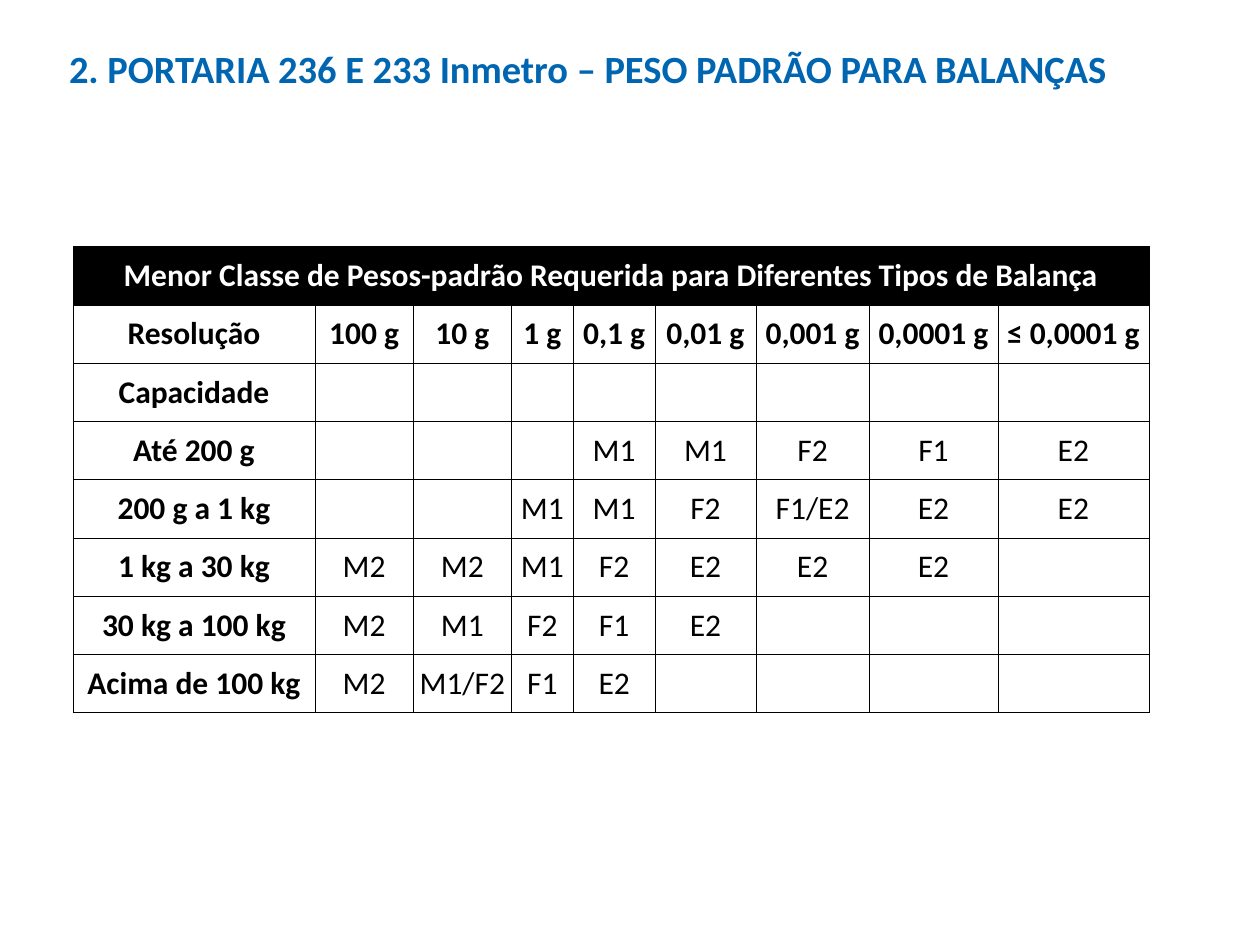
"""Build a slide with the table of minimum weight classes for balances."""
from dataclasses import dataclass

from lxml import etree
from pptx import Presentation
from pptx.dml.color import RGBColor
from pptx.enum.text import MSO_ANCHOR, PP_ALIGN
from pptx.oxml.ns import qn
from pptx.util import Inches, Pt

MIDDLE = MSO_ANCHOR.MIDDLE
LEFT, CENTER = PP_ALIGN.LEFT, PP_ALIGN.CENTER
BLACK = RGBColor(0x00, 0x00, 0x00)
WHITE = RGBColor(0xFF, 0xFF, 0xFF)
BLUE = RGBColor(0x00, 0x66, 0xB2)
FONT = "Calibri"
SLIDE_W, SLIDE_H = Inches(10), Inches(7.5)
COL_WIDTHS = (1.92, 0.78, 0.78, 0.49, 0.65, 0.8, 0.9, 1.02, 1.2)
ROW_HEIGHT = 0.4625
TITLE = "2. PORTARIA 236 E 233 Inmetro – PESO PADRÃO PARA BALANÇAS"
CAPTION = "Menor Classe de Pesos-padrão Requerida para Diferentes Tipos de Balança"
RESOLUTIONS = ("100 g", "10 g", "1 g", "0,1 g", "0,01 g", "0,001 g", "0,0001 g", "≤ 0,0001 g")


@dataclass(frozen=True)
class Capacity:
    """A capacity range and its classes, starting at a resolution column."""
    label: str
    first_col: int = 1
    classes: tuple[str, ...] = ()


CAPACITIES = (
    Capacity("Capacidade"),
    Capacity("Até 200 g", 4, ("M1", "M1", "F2", "F1", "E2")),
    Capacity("200 g a 1 kg", 3, ("M1", "M1", "F2", "F1/E2", "E2", "E2")),
    Capacity("1 kg a 30 kg", 1, ("M2", "M2", "M1", "F2", "E2", "E2", "E2")),
    Capacity("30 kg a 100 kg", 1, ("M2", "M1", "F2", "F1", "E2")),
    Capacity("Acima de 100 kg", 1, ("M2", "M1/F2", "F1", "E2")),
)


def add_text(tf, text: str, size: int, color: RGBColor, bold: bool, align) -> None:
    """Write one formatted run into the first paragraph."""
    p = tf.paragraphs[0]
    p.alignment = align
    r = p.add_run()
    r.text = text
    r.font.name, r.font.size, r.font.bold = FONT, Pt(size), bold
    r.font.color.rgb = color


def style_cell(cell, fill: RGBColor) -> None:
    """Set the borders, fill, margins and anchor of a cell."""
    tc_pr = cell._tc.get_or_add_tcPr()
    for side in ("a:lnL", "a:lnR", "a:lnT", "a:lnB"):
        ln = etree.SubElement(tc_pr, qn(side), w=str(Pt(0.25)))
        solid = etree.SubElement(ln, qn("a:solidFill"))
        etree.SubElement(solid, qn("a:srgbClr"), val=str(BLACK))
    cell.fill.solid()
    cell.fill.fore_color.rgb = fill
    cell.margin_left = cell.margin_right = Inches(0.05)
    cell.margin_top = cell.margin_bottom = 0
    cell.vertical_anchor = MIDDLE


def add_title(s) -> None:
    """Add the slide title."""
    sp = s.shapes.add_textbox(int(SLIDE_W * 0.045), int(SLIDE_H * 0.032),
                              int(SLIDE_W * 0.914), int(SLIDE_H * 0.087))
    tf = sp.text_frame
    tf.word_wrap = True
    tf.vertical_anchor = MIDDLE
    add_text(tf, TITLE, 22, BLUE, True, LEFT)
    tf.paragraphs[0].line_spacing = 0.9


def add_class_table(s) -> None:
    """Add the table of weight classes by capacity and resolution."""
    n_rows, n_cols = len(CAPACITIES) + 2, len(COL_WIDTHS)
    table = s.shapes.add_table(n_rows, n_cols, int(SLIDE_W * 0.058), int(SLIDE_H * 0.261),
                               Inches(sum(COL_WIDTHS)), Inches(ROW_HEIGHT * n_rows)).table
    table.first_row = table.horz_banding = False
    for col, width in zip(table.columns, COL_WIDTHS):
        col.width = Inches(width)
    for i, row in enumerate(table.rows):
        row.height = Inches(ROW_HEIGHT)
        for cell in row.cells:
            style_cell(cell, WHITE if i else BLACK)
    table.cell(0, 0).merge(table.cell(0, n_cols - 1))

    def write(row: int, col: int, text: str, bold: bool = True, color: RGBColor = BLACK) -> None:
        add_text(table.cell(row, col).text_frame, text, 18, color, bold, CENTER)

    write(0, 0, CAPTION, color=WHITE)
    for j, text in enumerate(("Resolução", *RESOLUTIONS)):
        write(1, j, text)
    for i, capacity in enumerate(CAPACITIES, 2):
        write(i, 0, capacity.label)
        for j, text in enumerate(capacity.classes, capacity.first_col):
            write(i, j, text, bold=False)


def main() -> None:
    """Build and save the slide."""
    prs = Presentation()
    prs.slide_width, prs.slide_height = SLIDE_W, SLIDE_H
    s = prs.slides.add_slide(prs.slide_layouts[6])
    add_class_table(s)
    add_title(s)
    prs.save("out.pptx")


if __name__ == "__main__":
    main()
